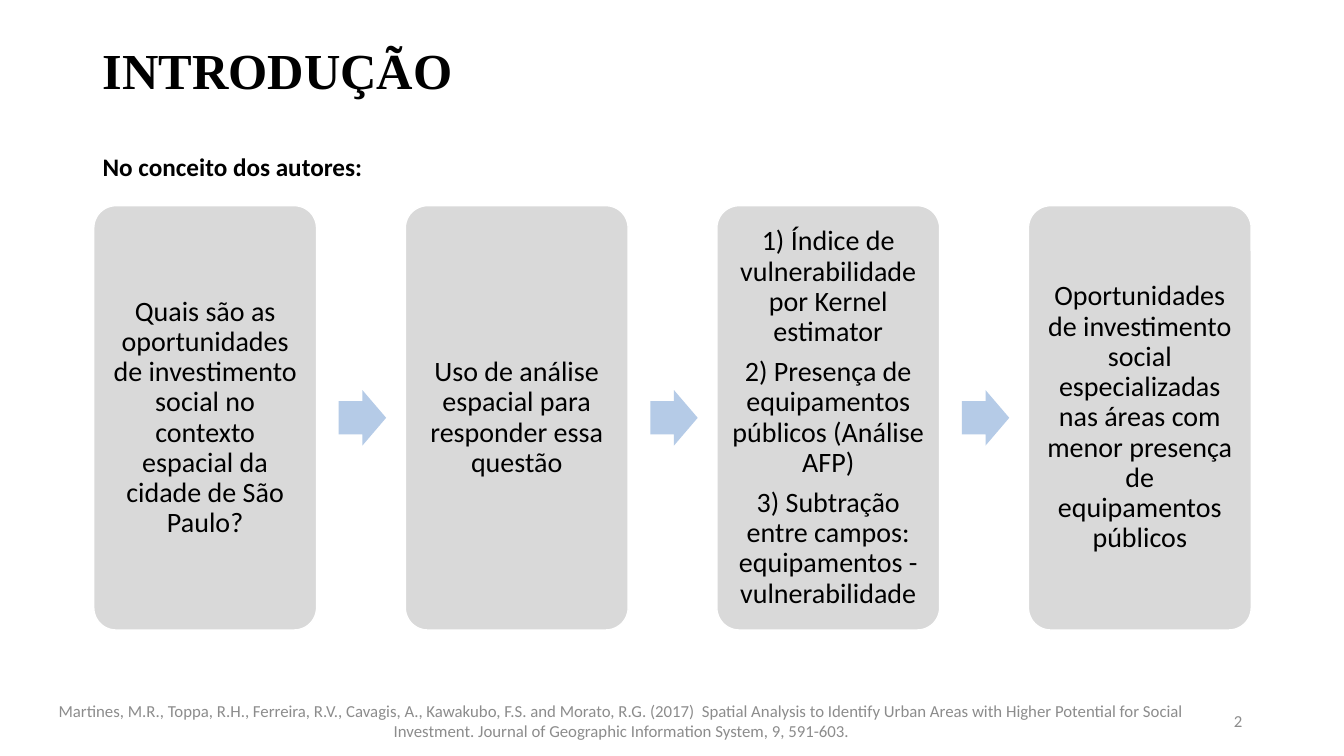
"""Build the introduction slide with a four-step flow of boxes and arrows."""
from pptx import Presentation
from pptx.dml.color import RGBColor
from pptx.enum.shapes import MSO_SHAPE
from pptx.enum.text import MSO_ANCHOR, PP_ALIGN
from pptx.util import Pt

PX = 9144
STEPS = [
    "Quais são as oportunidades de investimento social no contexto espacial da cidade de São Paulo?",
    "Uso de análise espacial para responder essa questão",
    "1) Índice de vulnerabilidade por Kernel estimator\n"
    "2) Presença de equipamentos públicos (Análise AFP)\n"
    "3) Subtração entre campos: equipamentos - vulnerabilidade",
    "Oportunidades de investimento social especializadas nas áreas com menor presença de equipamentos públicos",
]
SOURCE = (
    "Martines, M.R., Toppa, R.H., Ferreira, R.V., Cavagis, A., Kawakubo, F.S. and Morato, R.G. (2017)  "
    "Spatial Analysis to Identify Urban Areas with Higher Potential for Social Investment. "
    "Journal of Geographic Information System, 9, 591-603."
)
LEFT, CENTER, RIGHT = PP_ALIGN.LEFT, PP_ALIGN.CENTER, PP_ALIGN.RIGHT


def color(code):
    return RGBColor.from_string(code)


def write(shape, text, size, ink="000000", align=LEFT, font="Calibri", bold=False, lines=1.0, after=0):
    frame = shape.text_frame
    frame.text = text
    frame.word_wrap = True
    frame.vertical_anchor = MSO_ANCHOR.MIDDLE
    for par in frame.paragraphs:
        par.alignment = align
        par.line_spacing = lines
        par.space_after = Pt(after)
        for run in par.runs:
            run.font.name = font
            run.font.size = Pt(size)
            run.font.bold = bold
            run.font.color.rgb = color(ink)


deck = Presentation()
deck.slide_width = 1333 * PX
deck.slide_height = 750 * PX
slide = deck.slides.add_slide(deck.slide_layouts[6])
shapes = slide.shapes

title = shapes.add_textbox(92 * PX, 0, 1150 * PX, 145 * PX)
write(title, "INTRODUÇÃO", 36, font="Times New Roman", bold=True, lines=0.9)

lead = shapes.add_textbox(92 * PX, 145 * PX, 330 * PX, 40 * PX)
write(lead, "No conceito dos autores:", 18, bold=True)

for i, step in enumerate(STEPS):
    x = 93 + 309 * i
    box = shapes.add_shape(MSO_SHAPE.ROUNDED_RECTANGLE, x * PX, 204 * PX, 221 * PX, 421 * PX)
    box.adjustments[0] = 0.1
    box.shadow.inherit = False
    box.fill.solid()
    box.fill.fore_color.rgb = color("D9D9D9")
    box.line.color.rgb = color("FFFFFF")
    box.line.width = Pt(1)
    frame = box.text_frame
    frame.margin_left = frame.margin_right = frame.margin_top = frame.margin_bottom = 8 * PX
    write(box, step, 20, align=CENTER, lines=0.9, after=7)
    if i < len(STEPS) - 1:
        arrow = shapes.add_shape(MSO_SHAPE.RIGHT_ARROW, (x + 243) * PX, 387 * PX, 47 * PX, 55 * PX)
        arrow.adjustments[0] = 0.6
        arrow.adjustments[1] = 0.5
        arrow.shadow.inherit = False
        arrow.fill.solid()
        arrow.fill.fore_color.rgb = color("B5CBE7")
        arrow.line.fill.background()

cite = shapes.add_textbox(36 * PX, 695 * PX, 1161 * PX, 40 * PX)
write(cite, SOURCE, 12, "8C8C8C", CENTER)

page = shapes.add_textbox(942 * PX, 695 * PX, 300 * PX, 40 * PX)
write(page, "2", 12, "8C8C8C", RIGHT)

deck.save("out.pptx")
